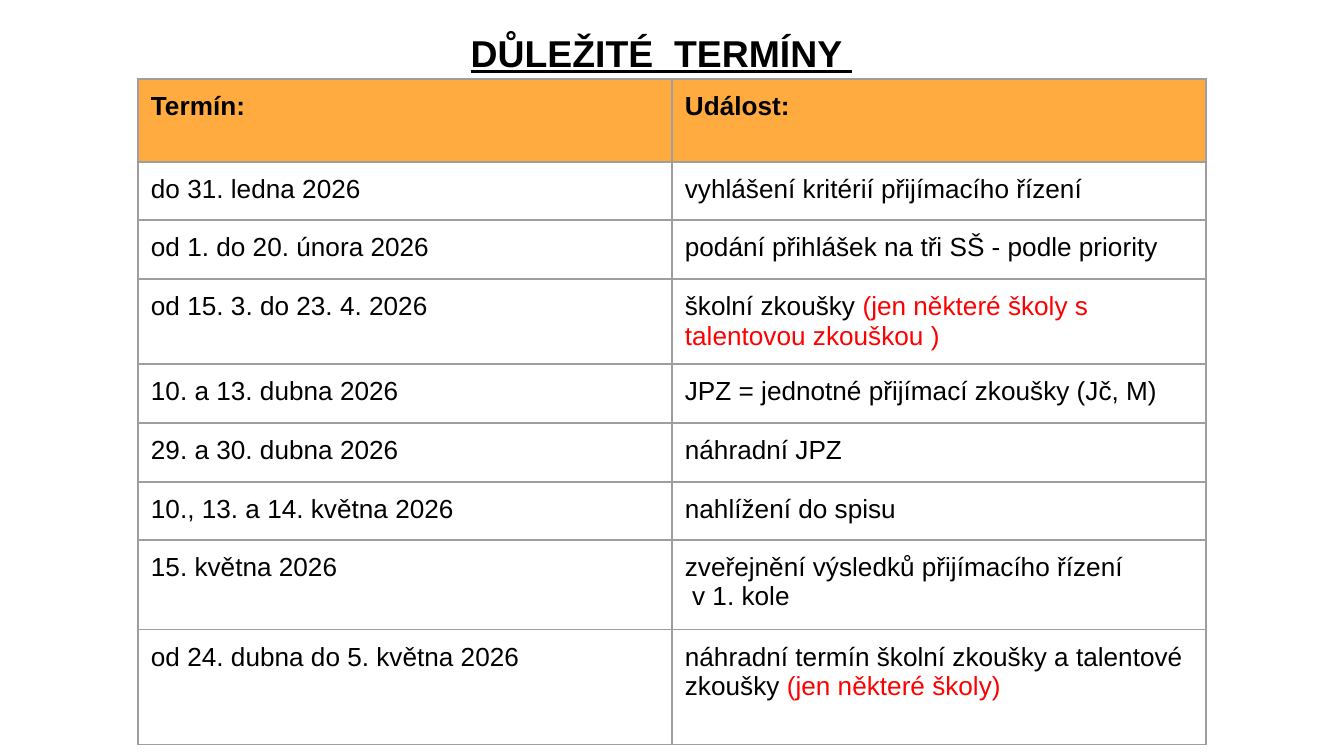
"""Build a slide with a two-column table of important admission dates."""
from lxml import etree
from pptx import Presentation, util as u
from pptx.dml.color import RGBColor
from pptx.enum import text
from pptx.oxml import ns

PX = 914400 / 134.4
THEME = {
    "font": "Arial", "title": 20, "body": 14,
    "ink": "000000", "accent": "FF0000", "header": "FFAB40", "border": "9E9E9E",
}
COLUMNS = [534, 534]
ROWS = [
    (83, "Termín:", [["Událost:"]]),
    (58, "do 31. ledna 2026", [["vyhlášení kritérií přijímacího řízení"]]),
    (59, "od 1. do 20. února 2026", [["podání přihlášek na tři SŠ - podle priority"]]),
    (85, "od 15. 3. do 23. 4. 2026",
     [["školní zkoušky ", "(jen některé školy s talentovou zkouškou )"]]),
    (59, "10. a 13. dubna 2026", [["JPZ = jednotné přijímací zkoušky (Jč, M)"]]),
    (59, "29. a 30. dubna 2026", [["náhradní JPZ"]]),
    (58, "10., 13. a 14. května 2026", [["nahlížení do spisu"]]),
    (90, "15. května 2026", [["zveřejnění výsledků přijímacího řízení"], [" v 1. kole"]]),
    (115, "od 24. dubna do 5. května 2026",
     [["náhradní termín školní zkoušky a talentové"], ["zkoušky ", "(jen některé školy)"]]),
]


def px(*lengths):
    return [u.Emu(round(length * PX)) for length in lengths]


def write(frame, paragraphs, size, **formats):
    for index, runs in enumerate(paragraphs):
        paragraph = frame.paragraphs[0] if index == 0 else frame.add_paragraph()
        for words, color in zip(runs, ("ink", "accent")):
            run = paragraph.add_run()
            run.text = words
            values = {"name": THEME["font"], "size": u.Pt(THEME[size]), **formats}
            for name, value in values.items():
                setattr(run.font, name, value)
            run.font.color.rgb = RGBColor.from_string(THEME[color])


presentation = Presentation()
presentation.slide_width, presentation.slide_height = px(1344, 756)
slide = presentation.slides.add_slide(presentation.slide_layouts[6])

heights = [row[0] for row in ROWS]
table = slide.shapes.add_table(
    len(ROWS), len(COLUMNS), *px(138, 79, sum(COLUMNS), sum(heights))).table
table.first_row = table.horz_banding = False
for column, width in zip(table.columns, px(*COLUMNS)):
    column.width = width
for row, height in zip(table.rows, px(*heights)):
    row.height = height

inset = px(13)[0]
for row_index, (height, date, event) in enumerate(ROWS):
    is_header = row_index == 0
    for column_index, paragraphs in enumerate(([[date]], event)):
        cell = table.cell(row_index, column_index)
        for side in ("left", "top", "right", "bottom"):
            setattr(cell, f"margin_{side}", inset)
        write(cell.text_frame, paragraphs, "body", bold=is_header)
        properties = cell._tc.get_or_add_tcPr()
        for edge in ("lnL", "lnR", "lnT", "lnB"):
            line = etree.SubElement(properties, ns.qn(f"a:{edge}"), w=str(u.Pt(0.75)))
            fill = etree.SubElement(line, ns.qn("a:solidFill"))
            etree.SubElement(fill, ns.qn("a:srgbClr"), val=THEME["border"])
        if is_header:
            cell.fill.solid()
            cell.fill.fore_color.rgb = RGBColor.from_string(THEME["header"])
        else:
            cell.fill.background()

title = slide.shapes.add_textbox(*px(456, 20, 411, 59)).text_frame
title_format = {
    "word_wrap": False, "margin_top": px(10)[0],
    "auto_size": text.MSO_AUTO_SIZE.SHAPE_TO_FIT_TEXT,
}
for name, value in title_format.items():
    setattr(title, name, value)
write(title, [["DŮLEŽITÉ  TERMÍNY "]], "title", bold=True, underline=True)
title.paragraphs[0].alignment = text.PP_ALIGN.CENTER

presentation.save("out.pptx")
